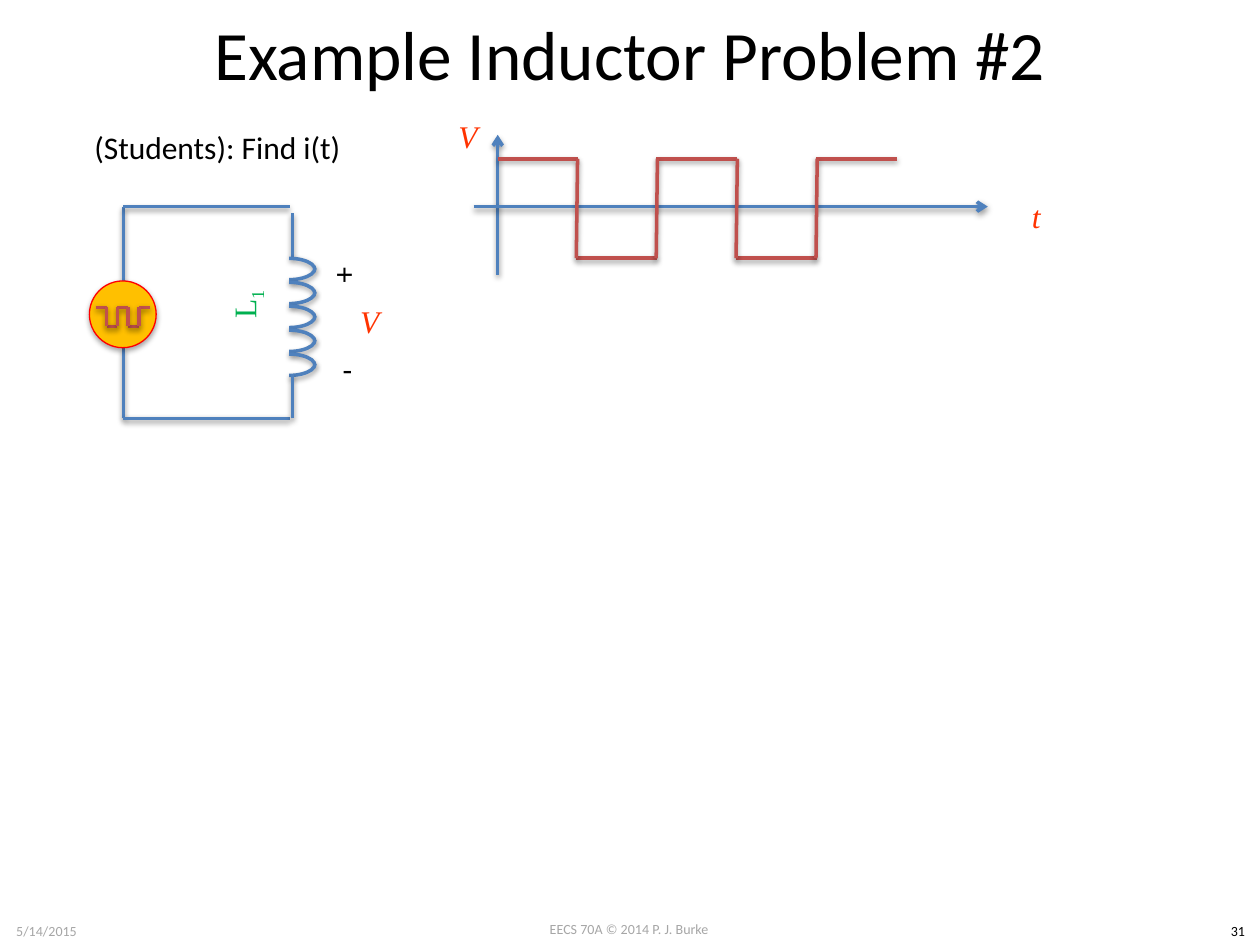
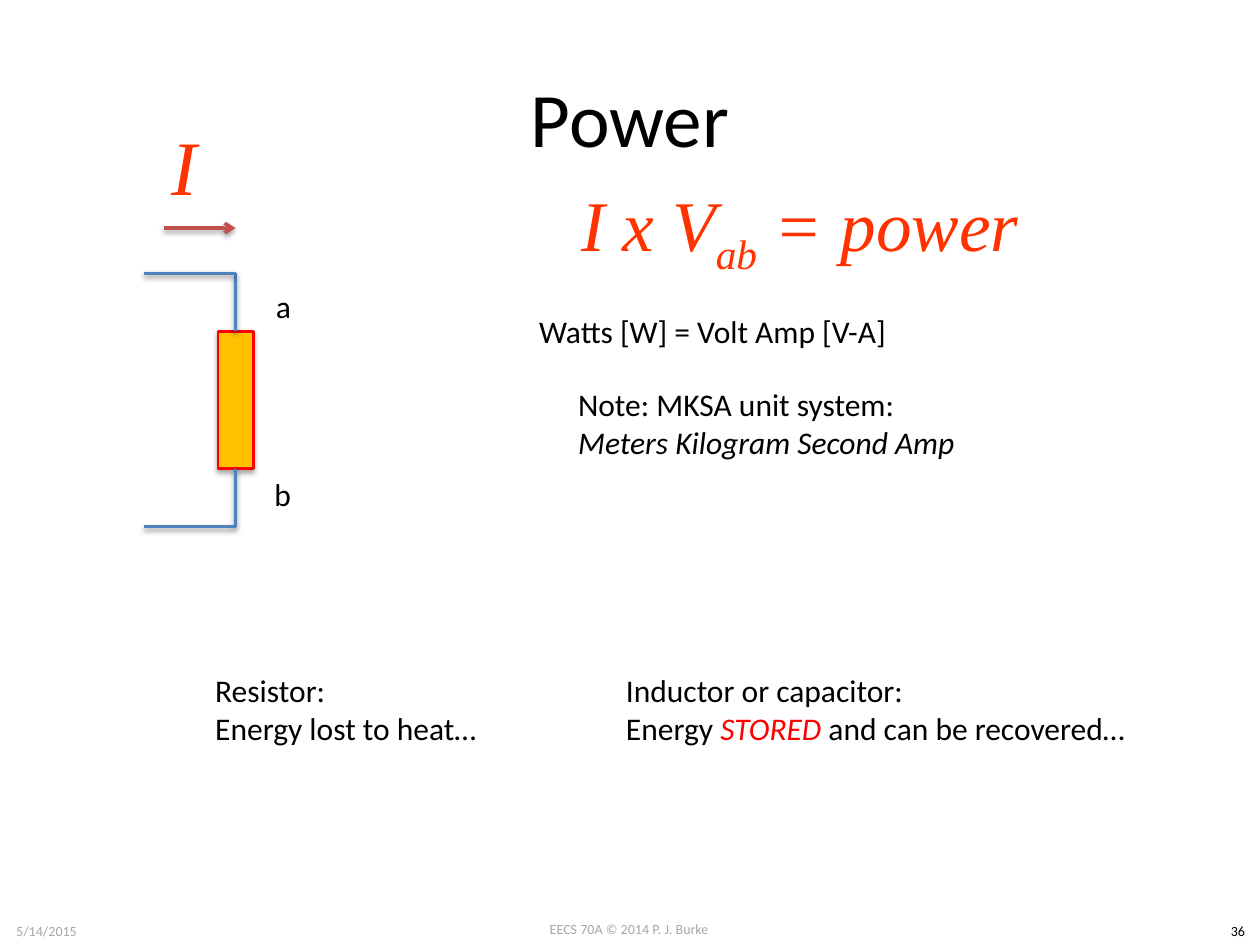
from lxml import etree
from pptx import Presentation
from pptx.dml.color import RGBColor
from pptx.enum.shapes import MSO_CONNECTOR, MSO_SHAPE
from pptx.enum.text import MSO_ANCHOR, MSO_AUTO_SIZE, PP_ALIGN
from pptx.oxml.ns import qn
from pptx.util import Inches, Pt

STRAIGHT = MSO_CONNECTOR.STRAIGHT
ARC, ELLIPSE, RECTANGLE = MSO_SHAPE.ARC, MSO_SHAPE.OVAL, MSO_SHAPE.RECTANGLE
TOP, MIDDLE = MSO_ANCHOR.TOP, MSO_ANCHOR.MIDDLE
LEFT, CENTER = PP_ALIGN.LEFT, PP_ALIGN.CENTER
FIXED_SIZE = MSO_AUTO_SIZE.NONE
TITLE_ONLY = 5
TOP_SIDE, BOTTOM_SIDE = 0, 2

BODY_FONT, SYMBOL_FONT = "Calibri", "Times New Roman"
BLACK, GRAY = "000000", "A6A6A6"
WIRE, SIGNAL = "4F81BD", "C0504D"
AMBER, RED = "FFC000", "FF0000"
SYMBOL, GREEN = "FF3300", "00B050"
SUBSCRIPT = -25000


def color(hex_string):
    return RGBColor.from_string(hex_string)


def cast_shadow(shape, opacity, distance):
    """Give a shape or connector a soft shadow straight below it."""
    effects = etree.SubElement(shape._element.spPr, qn("a:effectLst"))
    shadow = etree.SubElement(
        effects, qn("a:outerShdw"), blurRad=str(Pt(3.1)),
        dist=str(Pt(distance)), dir="5400000", rotWithShape="0")
    tint = etree.SubElement(shadow, qn("a:srgbClr"), val=BLACK)
    etree.SubElement(tint, qn("a:alpha"), val=str(opacity * 1000))


class Deck:
    def __init__(self):
        self.presentation = Presentation()
        self.presentation.slide_width = Inches(10)
        self.presentation.slide_height = Inches(7.5)
        self.slide = None

    def new_slide(self, title, number, top, height, size):
        layout = self.presentation.slide_layouts[TITLE_ONLY]
        self.slide = self.presentation.slides.add_slide(layout)
        shape = self.slide.shapes.title
        shape.left, shape.top = Inches(0.5), Inches(top)
        shape.width, shape.height = Inches(9), Inches(height)
        self.set_text(shape, [title], size, anchor=MIDDLE, align=CENTER)
        # Footer
        footers = [(3.83, 7.26, 2.33, "EECS 70A © 2014 P. J. Burke", GRAY),
                   (0, 7.27, 0.74, "5/14/2015", GRAY),
                   (9.65, 7.27, 0.35, number, BLACK)]
        for left, footer_top, width, words, tint in footers:
            self.text(left, footer_top, width, 0.24, words, size=8,
                      tint=tint, align=CENTER, wrap=True)

    def set_text(self, shape, paragraphs, size, tint=BLACK, font=BODY_FONT,
                 italic=False, anchor=TOP, align=LEFT, wrap=True):
        """Fill a shape; a paragraph is a string or a list of (text, style) runs."""
        frame = shape.text_frame
        frame.word_wrap = wrap
        frame.auto_size = FIXED_SIZE
        frame.vertical_anchor = anchor
        for index, runs in enumerate(paragraphs):
            paragraph = frame.add_paragraph() if index else frame.paragraphs[0]
            paragraph.alignment = align
            paragraph.font.name = font
            paragraph.font.size = Pt(size)
            paragraph.font.color.rgb = color(tint)
            paragraph.font.italic = italic
            if isinstance(runs, str):
                runs = [(runs, {})]
            for words, style in runs:
                run = paragraph.add_run()
                run.text = words
                if "italic" in style:
                    run.font.italic = style["italic"]
                if "tint" in style:
                    run.font.color.rgb = color(style["tint"])
                if "baseline" in style:
                    run._r.get_or_add_rPr().set("baseline", str(style["baseline"]))

    def text(self, left, top, width, height, *paragraphs, size=18,
             rotation=0, wrap=False, **style):
        box = self.slide.shapes.add_textbox(
            Inches(left), Inches(top), Inches(width), Inches(height))
        box.rotation = rotation
        self.set_text(box, paragraphs, size, wrap=wrap, **style)

    def symbol(self, left, top, width, height, runs, size=18, tint=SYMBOL,
               italic=True, rotation=0):
        self.text(left, top, width, height, runs, size=size, tint=tint,
                  italic=italic, rotation=rotation, font=SYMBOL_FONT,
                  anchor=MIDDLE, align=CENTER, wrap=True)

    def shape(self, kind, left, top, width, height, line, weight, fill=None,
              flipped=False, opacity=35, distance=1.8):
        shape = self.slide.shapes.add_shape(
            kind, Inches(left), Inches(top), Inches(width), Inches(height))
        if fill:
            shape.fill.solid()
            shape.fill.fore_color.rgb = color(fill)
        else:
            shape.fill.background()
        shape.line.color.rgb = color(line)
        shape.line.width = Pt(weight)
        if flipped:
            shape._element.spPr.xfrm.set("flipV", "1")
        cast_shadow(shape, opacity, distance)
        return shape

    def line(self, x1, y1, x2, y2, tint=WIRE, arrow=False, start=None):
        """Draw a line; start is an optional (shape, side) to join."""
        connector = self.slide.shapes.add_connector(
            STRAIGHT, Inches(x1), Inches(y1), Inches(x2), Inches(y2))
        if start:
            connector.begin_connect(*start)
        connector.line.color.rgb = color(tint)
        connector.line.width = Pt(2)
        if arrow:
            outline = connector._element.spPr.find(qn("a:ln"))
            etree.SubElement(outline, qn("a:tailEnd"), type="arrow")
        cast_shadow(connector, 38, 1.6)

    def square_wave(self, left, top, width, height, slant=0):
        """Draw five half periods, starting high."""
        half = width / 5
        for index in range(5):
            low = index % 2
            x = left + index * half
            y = top + low * height
            start = x - slant if index else x
            self.line(start, y, x + half, y, SIGNAL)
            if index:
                self.line(x, top, x - slant, top + height, SIGNAL)

    def coil(self, left, top, turns, pitch):
        """Stack half-ellipse turns, each made of two quarter arcs."""
        for turn in range(turns):
            for flipped in (False, True):
                offset = 0 if flipped else 0.01
                self.shape(ARC, left, top + turn * pitch + offset, 0.41, 0.18,
                           WIRE, 2, flipped=flipped, opacity=38, distance=1.6)


def inductor_slide(deck):
    deck.new_slide("Example Inductor Problem #2", "31", 0, 0.83, 39.6)
    deck.text(0.65, 0.97, 2.25, 0.4, "(Students): Find i(t)")

    # Circuit loop and source
    source_x, coil_x, loop_top, loop_bottom = 0.98, 2.32, 1.64, 3.32
    deck.line(source_x, 2.23, source_x, loop_top)
    deck.line(source_x, 2.76, source_x, loop_bottom)
    for y in (loop_top, loop_bottom):
        deck.line(source_x, y, 2.3, y)
    deck.shape(ELLIPSE, 0.71, 2.23, 0.53, 0.53, RED, 0.75, AMBER)
    deck.square_wave(0.76, 2.44, 0.43, 0.15)

    # Inductor
    deck.line(coil_x, 2.04, coil_x, 1.69)
    deck.coil(2.09, 2.04, turns=5, pitch=0.19)
    deck.line(coil_x, loop_bottom, coil_x, 2.97)
    deck.text(2.59, 1.99, 0.33, 0.4, "+", rotation=90)
    deck.text(2.62, 2.73, 0.28, 0.4, "-")
    deck.symbol(2.55, 2.24, 0.77, 0.61, "V")
    deck.symbol(1.36, 2.05, 1.19, 0.73,
                [("L", {}), ("1", {"baseline": SUBSCRIPT})],
                tint=GREEN, italic=False, rotation=270)

    # Voltage graph
    deck.line(3.95, 2.18, 3.95, 1.07, arrow=True)
    deck.line(3.76, loop_top, 7.84, loop_top, arrow=True)
    deck.symbol(3.33, 0.77, 0.77, 0.61, "V")
    deck.symbol(7.84, 1.41, 0.77, 0.61, "t")
    deck.square_wave(3.95, 1.26, 3.17, 0.79, slant=0.01)


def power_slide(deck):
    deck.new_slide("Power", "36", 0.3, 1.25, 44)

    # Resistor with its leads and terminals
    lead_x, wire_left, loop_top, loop_bottom = 1.87, 1.14, 2.17, 4.18
    resistor = deck.shape(RECTANGLE, 1.73, 2.63, 0.28, 1.09, RED, 1.5, AMBER)
    deck.line(lead_x, 2.63, lead_x, loop_top, start=(resistor, TOP_SIDE))
    deck.line(lead_x, 3.72, lead_x, loop_bottom, start=(resistor, BOTTOM_SIDE))
    for y in (loop_top, loop_bottom):
        deck.line(wire_left, y, lead_x, y)
    deck.text(2.09, 2.23, 0.32, 0.4, "a")
    deck.text(2.08, 3.72, 0.34, 0.4, "b")

    # Current
    deck.line(1.3, 1.81, lead_x, 1.81, SIGNAL, arrow=True)
    deck.symbol(0.84, 0.8, 1.25, 1.01, "I", size=44)

    # Power formula and units
    deck.symbol(4.49, 1.31, 3.72, 1.01,
                [("I x V", {}), ("ab", {"baseline": SUBSCRIPT}),
                 (" = power", {})], size=40.7)
    deck.text(4.18, 2.43, 3, 0.4, "Watts [W] = Volt Amp [V-A]")
    deck.text(4.49, 3.01, 3.24, 0.71, "Note: MKSA unit system:",
              [("Meters Kilogram Second Amp", {"italic": True})])

    # Where the energy goes
    deck.text(1.61, 5.28, 2.31, 0.71, "Resistor:", "Energy lost to heat…")
    deck.text(4.87, 5.28, 4.23, 0.71, "Inductor or capacitor:",
              [("Energy ", {}), ("STORED", {"tint": RED, "italic": True}),
               (" and can be recovered…", {})])


def main():
    deck = Deck()
    inductor_slide(deck)
    power_slide(deck)
    deck.presentation.save("out.pptx")


if __name__ == "__main__":
    main()
